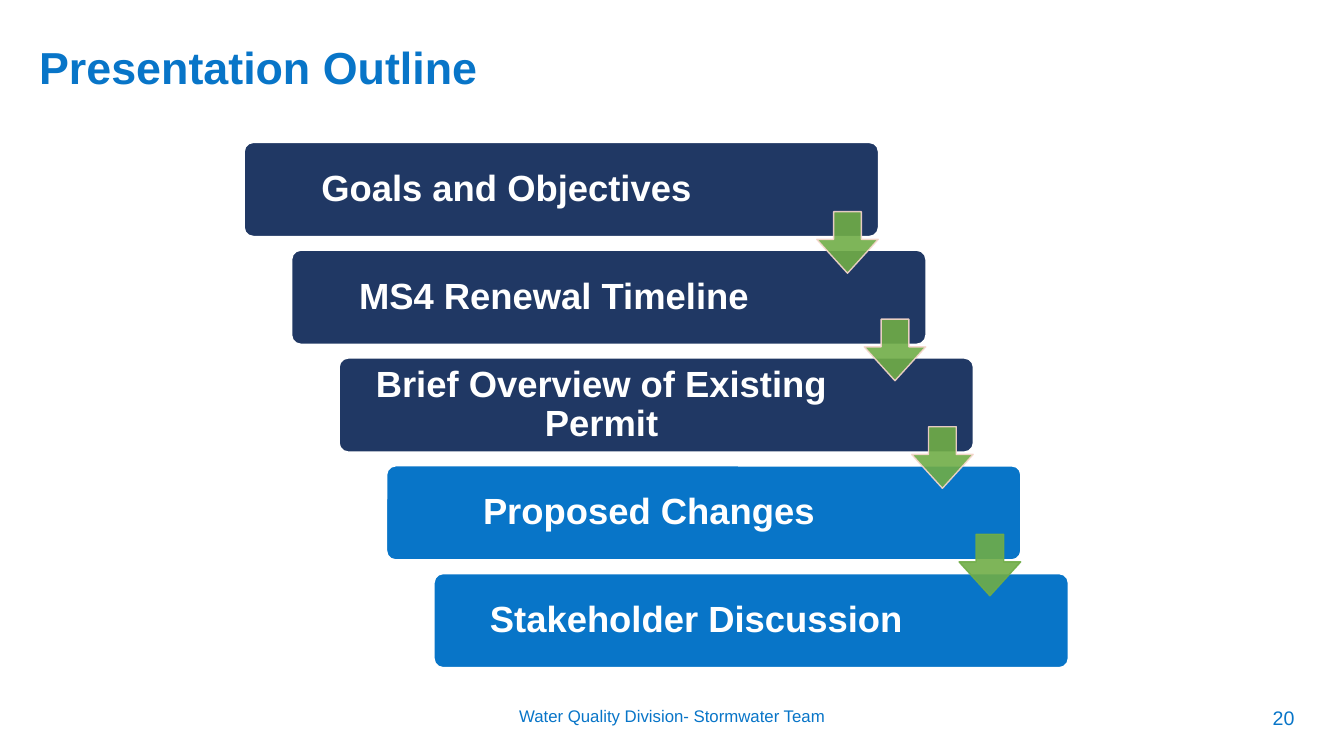
"""Build the Presentation Outline slide as a staircase of five topics."""
from dataclasses import dataclass

from lxml import etree
from pptx import Presentation
from pptx.dml.color import RGBColor
from pptx.enum.shapes import MSO_SHAPE
from pptx.enum.text import MSO_ANCHOR, PP_ALIGN
from pptx.oxml.ns import qn
from pptx.slide import Slide
from pptx.text.text import TextFrame
from pptx.util import Pt

ROUNDED = MSO_SHAPE.ROUNDED_RECTANGLE
DOWN_ARROW = MSO_SHAPE.DOWN_ARROW
LEFT, CENTER = PP_ALIGN.LEFT, PP_ALIGN.CENTER
TOP, MIDDLE = MSO_ANCHOR.TOP, MSO_ANCHOR.MIDDLE


@dataclass(frozen=True)
class Theme:
    font: str = "Arial"
    navy: str = "203864"
    blue: str = "0875C8"
    green: str = "70AD47"
    blush: str = "F8D7CE"
    white: str = "FFFFFF"
    title_size: float = 32
    topic_size: float = 26
    number_size: float = 14
    footer_size: float = 12
    arrow_opacity: int = 90


@dataclass(frozen=True)
class Area:
    left: float
    top: float
    width: float
    height: float

    def shifted(self, steps: int, across: float, down: float) -> "Area":
        return Area(self.left + steps * across, self.top + steps * down, self.width, self.height)

    def lengths(self) -> list[Pt]:
        return [Pt(value) for value in (self.left, self.top, self.width, self.height)]


@dataclass(frozen=True)
class Label:
    text: str
    area: Area
    size: float
    bold: bool = False
    align: PP_ALIGN = CENTER
    spacing: float = 1.0


@dataclass(frozen=True)
class Topic:
    text: str
    fill: str


@dataclass(frozen=True)
class Arrow:
    line: str


THEME = Theme()
STEP_ACROSS = 33.9
CARD_DOWN, ARROW_DOWN = 77, 76.8
FIRST_CARD = Area(174.2, 101.5, 453.6, 67.7)
FIRST_ARROW = Area(583.4, 151.2, 44, 44)
CARD_FRAME = {
    "word_wrap": True,
    "vertical_anchor": MIDDLE,
    "margin_left": Pt(8),
    "margin_right": Pt(86),
    "margin_top": Pt(8),
    "margin_bottom": Pt(8),
}
LABEL_FRAME = {"word_wrap": True, "vertical_anchor": TOP}

LABELS = [
    Label("Presentation Outline", Area(20.9, 28.8, 895, 49), THEME.title_size, True, LEFT, 0.9),
    Label("Water Quality Division- Stormwater Team", Area(318.2, 500.4, 324, 28.8), THEME.footer_size),
    Label("20", Area(884.9, 500.4, 64, 28.8), THEME.number_size),
]
TOPICS = [
    Topic("Goals and Objectives", THEME.navy),
    Topic("MS4 Renewal Timeline", THEME.navy),
    Topic("Brief Overview of Existing Permit", THEME.navy),
    Topic("Proposed Changes", THEME.blue),
    Topic("Stakeholder Discussion", THEME.blue),
]
ARROWS = [Arrow(THEME.blush)] * 3 + [Arrow(THEME.green)]


def apply_format(target: object, values: dict[str, object]) -> None:
    """Set each named attribute of the target."""
    for name, value in values.items():
        setattr(target, name, value)


def write_text(frame: TextFrame, label: Label, color: str, frame_format: dict[str, object]) -> None:
    """Fill a text frame with one formatted paragraph."""
    apply_format(frame, frame_format)
    para = frame.paragraphs[0]
    apply_format(para, {"alignment": label.align, "line_spacing": label.spacing})
    span = para.add_run()
    span.text = label.text
    apply_format(span.font, {"name": THEME.font, "size": Pt(label.size), "bold": label.bold})
    span.font.color.rgb = RGBColor.from_string(color)


def draw_label(page: Slide, label: Label) -> None:
    """Draw a plain text box."""
    box = page.shapes.add_textbox(*label.area.lengths())
    write_text(box.text_frame, label, THEME.blue, LABEL_FRAME)


def draw_shape(page: Slide, kind: MSO_SHAPE, area: Area, fill: str, line: str,
               weight: float, adjustments: list[float]):
    """Draw a filled and outlined preset shape without a shadow."""
    shape = page.shapes.add_shape(kind, *area.lengths())
    shape.shadow.inherit = False
    shape.fill.solid()
    shape.fill.fore_color.rgb = RGBColor.from_string(fill)
    shape.line.color.rgb = RGBColor.from_string(line)
    shape.line.width = Pt(weight)
    for index, value in enumerate(adjustments):
        shape.adjustments[index] = value
    return shape


def draw_topic(page: Slide, topic: Topic, step: int) -> None:
    """Draw one card of the staircase."""
    area = FIRST_CARD.shifted(step, STEP_ACROSS, CARD_DOWN)
    card = draw_shape(page, ROUNDED, area, topic.fill, THEME.white, 1.5, [0.1])
    label = Label(topic.text, area, THEME.topic_size, True, CENTER, 0.9)
    write_text(card.text_frame, label, THEME.white, CARD_FRAME)


def draw_arrow(page: Slide, arrow: Arrow, step: int) -> None:
    """Draw a translucent arrow leading to the next card."""
    area = FIRST_ARROW.shifted(step, STEP_ACROSS, ARROW_DOWN)
    shape = draw_shape(page, DOWN_ARROW, area, THEME.green, arrow.line, 1, [0.45, 0.55])
    for color in shape.element.spPr.iter(qn("a:srgbClr")):
        etree.SubElement(color, qn("a:alpha")).set("val", str(THEME.arrow_opacity * 1000))


def main() -> None:
    """Build and save the deck."""
    deck = Presentation()
    apply_format(deck, {"slide_width": Pt(960), "slide_height": Pt(540)})
    page = deck.slides.add_slide(deck.slide_layouts[6])
    for label in LABELS:
        draw_label(page, label)
    for step, topic in enumerate(TOPICS):
        draw_topic(page, topic, step)
    for step, arrow in enumerate(ARROWS):
        draw_arrow(page, arrow, step)
    deck.save("out.pptx")


if __name__ == "__main__":
    main()
